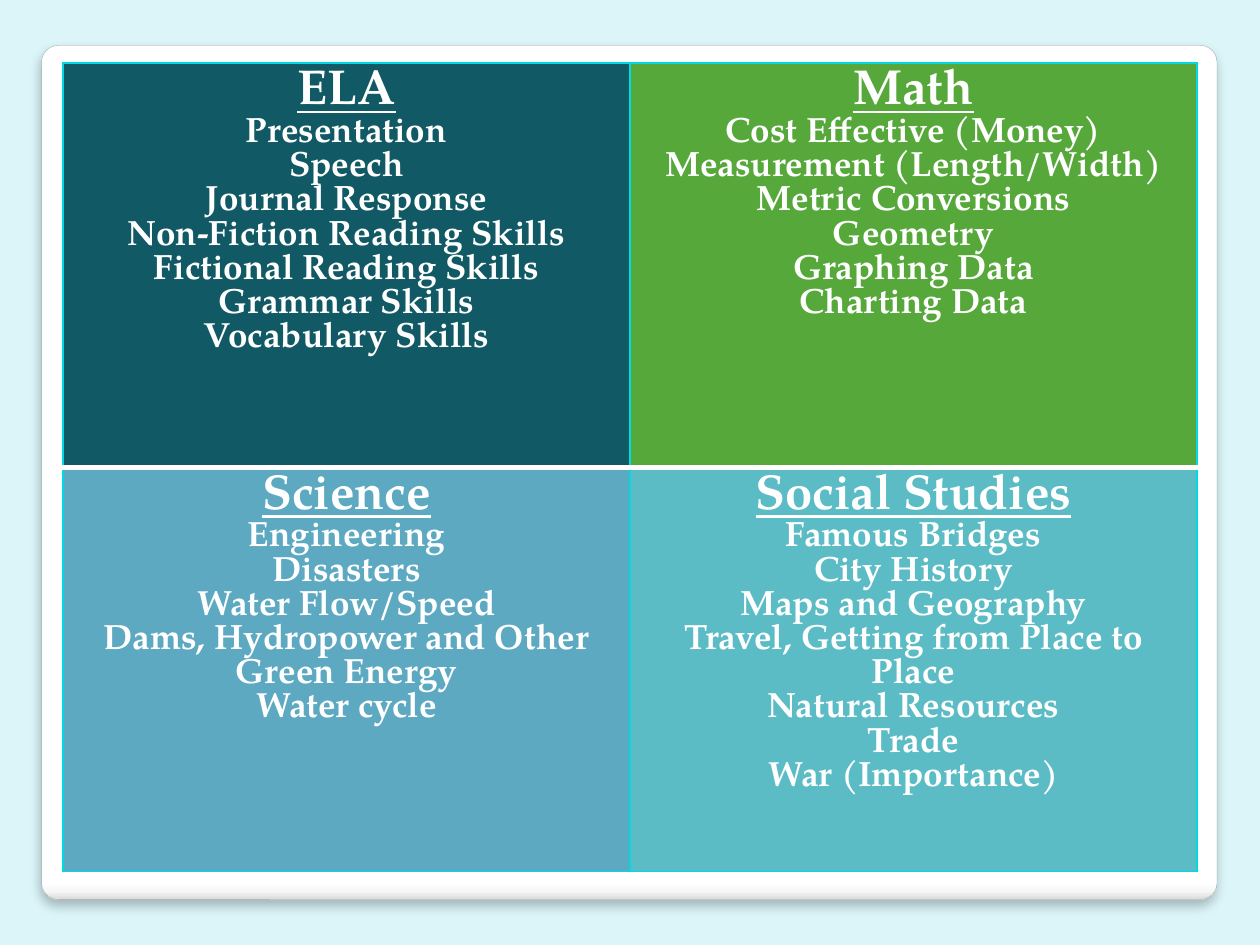
from lxml import etree
from pptx import Presentation
from pptx.dml.color import RGBColor
from pptx.enum import shapes, text
from pptx.oxml import parse_xml
from pptx.oxml.ns import nsdecls, qn
from pptx.util import Inches, Pt

COLORS = {
    "background": "DBF5F9", "white": "FFFFFF", "panel_line": "A4A4A4",
    "border": "00DAE4", "ela": "115964", "math": "55A839",
    "science": "5DA9C1", "social": "5BBCC5",
}
FONT = "TeX Gyre Pagella"
SUBJECTS = [
    [("ELA", "ela", ["Presentation", "Speech", "Journal Response",
                     "Non-Fiction Reading Skills", "Fictional Reading Skills",
                     "Grammar Skills", "Vocabulary Skills"]),
     ("Math", "math", ["Cost Effective (Money)", "Measurement (Length/Width)",
                       "Metric Conversions", "Geometry", "Graphing Data",
                       "Charting Data"])],
    [("Science", "science", ["Engineering", "Disasters", "Water Flow/Speed",
                             "Dams, Hydropower and Other Green Energy",
                             "Water cycle"]),
     ("Social Studies", "social", ["Famous Bridges", "City History",
                                   "Maps and Geography",
                                   "Travel, Getting from Place to Place",
                                   "Natural Resources", "Trade",
                                   "War (Importance)"])],
]


def color(name):
    return RGBColor.from_string(COLORS[name])


def set_borders(cell, borders):
    properties = cell._tc.get_or_add_tcPr()
    for index, (side, (name, width)) in enumerate(borders.items()):
        line = etree.Element(qn(f"a:ln{side}"), w=str(Pt(width)))
        fill = etree.SubElement(line, qn("a:solidFill"))
        etree.SubElement(fill, qn("a:srgbClr"), val=COLORS[name])
        properties.insert(index, line)


presentation = Presentation()
presentation.slide_width = Inches(10)
presentation.slide_height = Inches(7.5)
slide = presentation.slides.add_slide(presentation.slide_layouts[6])
slide.background.fill.solid()
slide.background.fill.fore_color.rgb = color("background")

# Rounded panel with a shaded lower edge and a soft shadow
panel = slide.shapes.add_shape(
    shapes.MSO_SHAPE.ROUNDED_RECTANGLE,
    Inches(0.33), Inches(0.36), Inches(9.33), Inches(6.78))
panel.adjustments[0] = 0.02
panel.line.color.rgb = color("panel_line")
panel.line.width = Pt(0.16)
panel.shadow.inherit = False
properties = panel._element.spPr
stops = "".join(
    f'<a:gs pos="{share * 1000}"><a:srgbClr val="{shade}"/></a:gs>'
    for share, shade in [(0, "FFFFFF"), (98, "FFFFFF"), (99, "F7F7F7"), (100, "DADADA")])
properties.find(qn("a:ln")).addprevious(parse_xml(
    f'<a:gradFill {nsdecls("a")}><a:gsLst>{stops}</a:gsLst>'
    '<a:lin ang="5400000" scaled="0"/></a:gradFill>'))
properties.find(qn("a:effectLst")).append(parse_xml(
    f'<a:outerShdw {nsdecls("a")} blurRad="{Pt(6)}" dist="{Pt(4)}" dir="5400000" '
    'rotWithShape="0"><a:srgbClr val="000000"><a:alpha val="25000"/></a:srgbClr>'
    '</a:outerShdw>'))

# Two by two table of subjects
table = slide.shapes.add_table(
    2, 2, Inches(0.5), Inches(0.5), Inches(9), Inches(6.42)).table
thin, divider = ("border", 0.75), ("white", 3.35)
for row, subjects in enumerate(SUBJECTS):
    for column, (title, fill, topics) in enumerate(subjects):
        cell = table.cell(row, column)
        cell.fill.solid()
        cell.fill.fore_color.rgb = color(fill)
        set_borders(cell, {"L": thin, "R": thin,
                           "T": divider if row else thin,
                           "B": thin if row else divider})

        # Underlined subject, then its topics
        frame = cell.text_frame
        frame.text = "\n".join([title, *topics])
        for index, paragraph in enumerate(frame.paragraphs):
            paragraph.alignment = text.PP_ALIGN.CENTER
            font = paragraph.font
            font.name = FONT
            font.size = Pt(20 if index else 28)
            font.bold = True
            font.underline = index == 0
            font.color.rgb = color("white")

presentation.save("out.pptx")
